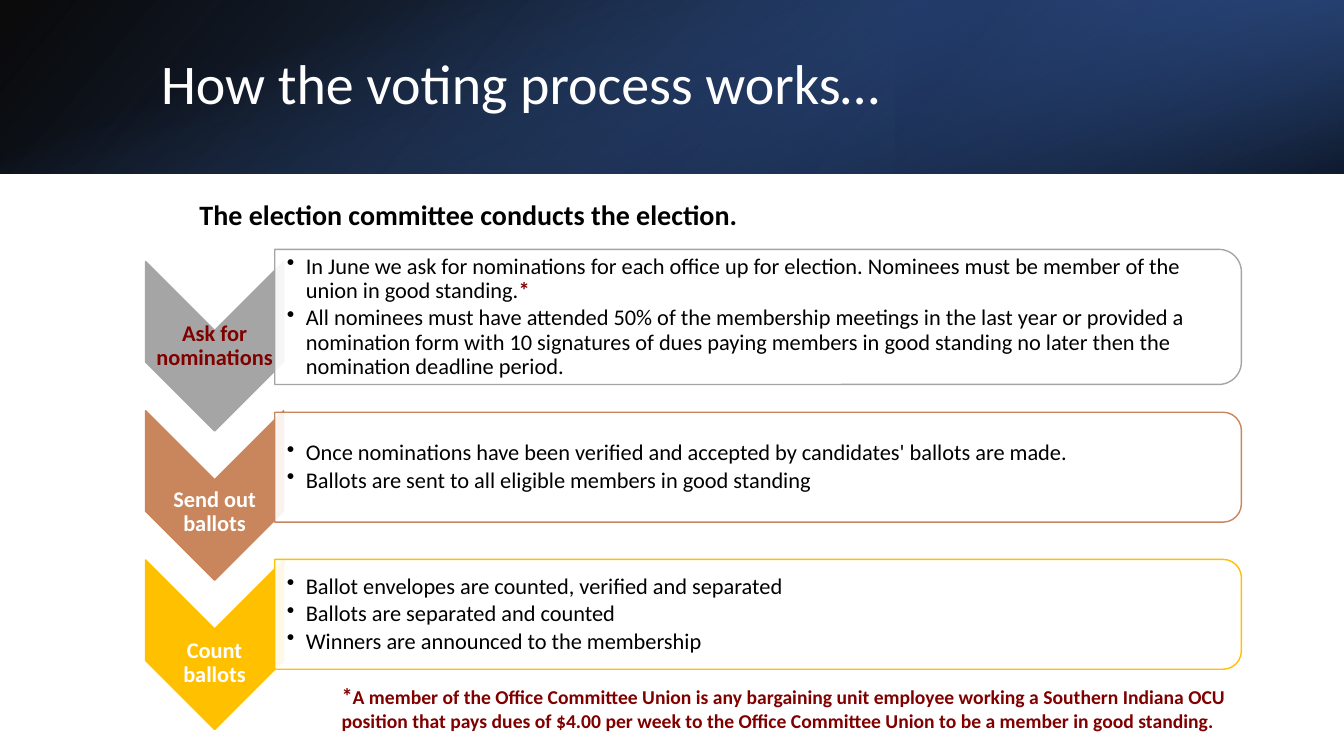
from lxml.etree import SubElement
from pptx import Presentation
from pptx.dml.color import RGBColor
from pptx.enum.shapes import MSO_SHAPE as Preset
from pptx.enum.text import MSO_ANCHOR as Anchor, PP_ALIGN as Align
from pptx.oxml.ns import qn
from pptx.util import Pt

COLORS = {
    "white": "FFFFFF", "black": "000000", "maroon": "800000",
    "gray": "A5A5A5", "copper": "C9855C", "gold": "FFC000",
    "blue": "4472C4", "navy": "203864", "royal": "2F5597",
}
BODY = {"size": Pt(16), "color": "black"}
STRONG = {"size": Pt(16), "color": "maroon", "bold": True}

HEADER_LAYERS = [
    {"box": (0, 0, 960, 124), "rotation": 0, "flip": True, "angle": 140,
     "stops": [(0, "black", 96), (1, "royal", 100)]},
    {"box": (640, 0, 320, 124), "rotation": 180, "flip": True, "angle": 320,
     "stops": [(0.19, "navy", 68), (1, "blue", 79)]},
    {"box": (0, 0, 960, 124), "rotation": 90, "flip": False, "angle": 340,
     "stops": [(0.23, "blue", 0), (0.99, "black", 74)]},
]
STEPS = [
    {"label": "Ask for nominations", "label_color": "maroon", "label_drop": 0,
     "color": "gray", "center": 226.4, "height": 96.5,
     "bullets": [
         [("In June we ask for nominations for each office up for election. "
           "Nominees must be member of the union in good standing.", BODY),
          ("*", STRONG)],
         [("All nominees must have attended 50% of the membership meetings in the "
           "last year or provided a nomination form with 10 signatures of dues "
           "paying members in good standing no later then the nomination deadline "
           "period.", BODY)]]},
    {"label": "Send out ballots", "label_color": "white", "label_drop": 12,
     "color": "copper", "center": 333.7, "height": 78.5,
     "bullets": [
         [("Once nominations have been verified and accepted by candidates' "
           "ballots are made.", BODY)],
         [("Ballots are sent to all eligible members in good standing", BODY)]]},
    {"label": "Count\vballots", "label_color": "white", "label_drop": 13,
     "color": "gold", "center": 438.8, "height": 78.5,
     "bullets": [
         [("Ballot envelopes are counted, verified and separated", BODY)],
         [("Ballots are separated and counted", BODY)],
         [("Winners are announced to the membership", BODY)]]},
]
FOOTNOTE = [
    ("*", STRONG),
    ("A member of the Office Committee Union is any bargaining unit employee working "
     "a Southern Indiana OCU position that pays dues of $4.00 per week to the Office "
     "Committee Union to be a member in good standing.", {**STRONG, "size": Pt(14)}),
]


def rgb(name):
    """Return the named colour."""
    return RGBColor.from_string(COLORS[name])


def set_opacity(shape, percents):
    """Give the fill colours of a shape their opacity, in order."""
    for color, percent in zip(shape._element.spPr.iter(qn("a:srgbClr")), percents):
        SubElement(color, qn("a:alpha")).set("val", str(percent * 1000))


def add_turned(slide, preset, box, rotation):
    """Add a rotated shape that covers the given box once it is turned."""
    left, top, width, height = box
    if rotation == 90:
        left, top = left + (width - height) / 2, top + (height - width) / 2
        width, height = height, width
    shape = slide.shapes.add_shape(preset, Pt(left), Pt(top), Pt(width), Pt(height))
    shape.rotation = rotation
    shape.shadow.inherit = False
    return shape


def add_text(slide, box, paragraphs, frame_format=None, paragraph_format=None, bullet=False):
    """Add a wrapped text box whose paragraphs are lists of (text, format) runs."""
    frame = slide.shapes.add_textbox(*map(Pt, box)).text_frame
    for key, value in {"word_wrap": True, **(frame_format or {})}.items():
        setattr(frame, key, value)
    for index, runs in enumerate(paragraphs):
        paragraph = frame.add_paragraph() if index else frame.paragraphs[0]
        if bullet:
            properties = paragraph._p.get_or_add_pPr()
            properties.set("marL", str(Pt(13.5)))
            properties.set("indent", str(-Pt(13.5)))
            SubElement(properties, qn("a:buChar")).set("char", "•")
        for key, value in (paragraph_format or {}).items():
            setattr(paragraph, key, value)
        for text, run_format in runs:
            for part_index, part in enumerate(text.split("\v")):
                if part_index:
                    paragraph.add_line_break()
                run = paragraph.add_run()
                run.text = part
                run.font.name = "Calibri"
                for key, value in run_format.items():
                    if key == "color":
                        run.font.color.rgb = rgb(value)
                    else:
                        setattr(run.font, key, value)


def add_header(slide, box):
    """Draw the layered gradient band and its title."""
    left, top, width, height = box
    for layer in HEADER_LAYERS:
        x, y, layer_width, layer_height = layer["box"]
        shape = add_turned(slide, Preset.RECTANGLE,
                           (left + x, top + y, layer_width, layer_height), layer["rotation"])
        if layer["flip"]:
            shape._element.spPr.xfrm.set("flipH", "1")
        shape.line.fill.background()
        shape.fill.gradient()
        shape.fill.gradient_angle = 360 - layer["angle"]
        for stop, (position, color, _) in zip(shape.fill.gradient_stops, layer["stops"]):
            stop.position = position
            stop.color.rgb = rgb(color)
        set_opacity(shape, [opacity for _, _, opacity in layer["stops"]])
    add_text(slide, (left + 108, top + 27.4, width - 169, 69),
             [[("How the voting process works…", {"size": Pt(40), "color": "white"})]],
             {"vertical_anchor": Anchor.MIDDLE}, {"line_spacing": 0.9})


def add_step(slide, box, step):
    """Draw a chevron with its label and the panel of bullets beside it."""
    left, top, width, height = box
    chevron_width = 98.6
    chevron = add_turned(slide, Preset.CHEVRON, (left, top, chevron_width, height), 90)
    chevron.fill.solid()
    chevron.fill.fore_color.rgb = rgb(step["color"])

    margins = {f"margin_{side}": Pt(0.7) for side in ("left", "top", "right", "bottom")}
    middle = {"vertical_anchor": Anchor.MIDDLE, **margins}
    label_format = {**STRONG, "color": step["label_color"]}
    add_text(slide, (left, top + height / 2 - 11 + step["label_drop"], chevron_width, 22),
             [[(step["label"], label_format)]], middle,
             {"alignment": Align.CENTER, "line_spacing": 0.9})

    panel_left, panel_width = left + 92.2, width - 92.2
    panel_top = step["center"] - step["height"] / 2
    panel = add_turned(slide, Preset.ROUND_2_SAME_RECTANGLE,
                       (panel_left, panel_top, panel_width, step["height"]), 90)
    panel.fill.solid()
    panel.fill.fore_color.rgb = rgb("white")
    set_opacity(panel, [90])
    for shape in (chevron, panel):
        shape.line.color.rgb = rgb(step["color"])
        shape.line.width = Pt(1)
    add_text(slide, (panel_left, panel_top + 4, panel_width - 4, step["height"] - 8),
             step["bullets"], {**middle, "margin_left": Pt(8.8)},
             {"line_spacing": 0.9, "space_after": Pt(2.4)}, bullet=True)


def add_steps(slide, box):
    """Stack the steps at equal distances, with the lead line and the footnote."""
    left, top, width, height = box
    add_text(slide, (left + 31.4, top - 46.4, 690, 36.7),
             [[("The election committee conducts the election.",
                {"size": Pt(20), "color": "black", "bold": True})]],
             None, {"line_spacing": 0.9})
    step_height = 121
    pitch = (height - step_height) / (len(STEPS) - 1)
    for index, step in enumerate(STEPS):
        add_step(slide, (left, top + index * pitch, width, step_height), step)
    add_text(slide, (left + 132.9, top + 297, 646.6, 44), [FOOTNOTE])


def main():
    """Build the slide and save it."""
    presentation = Presentation()
    presentation.slide_width, presentation.slide_height = Pt(960), Pt(540)
    slide = presentation.slides.add_slide(presentation.slide_layouts[6])
    add_header(slide, (0, 0, 960, 124))
    add_steps(slide, (104, 186.8, 782.7, 334.2))
    presentation.save("out.pptx")


if __name__ == "__main__":
    main()
